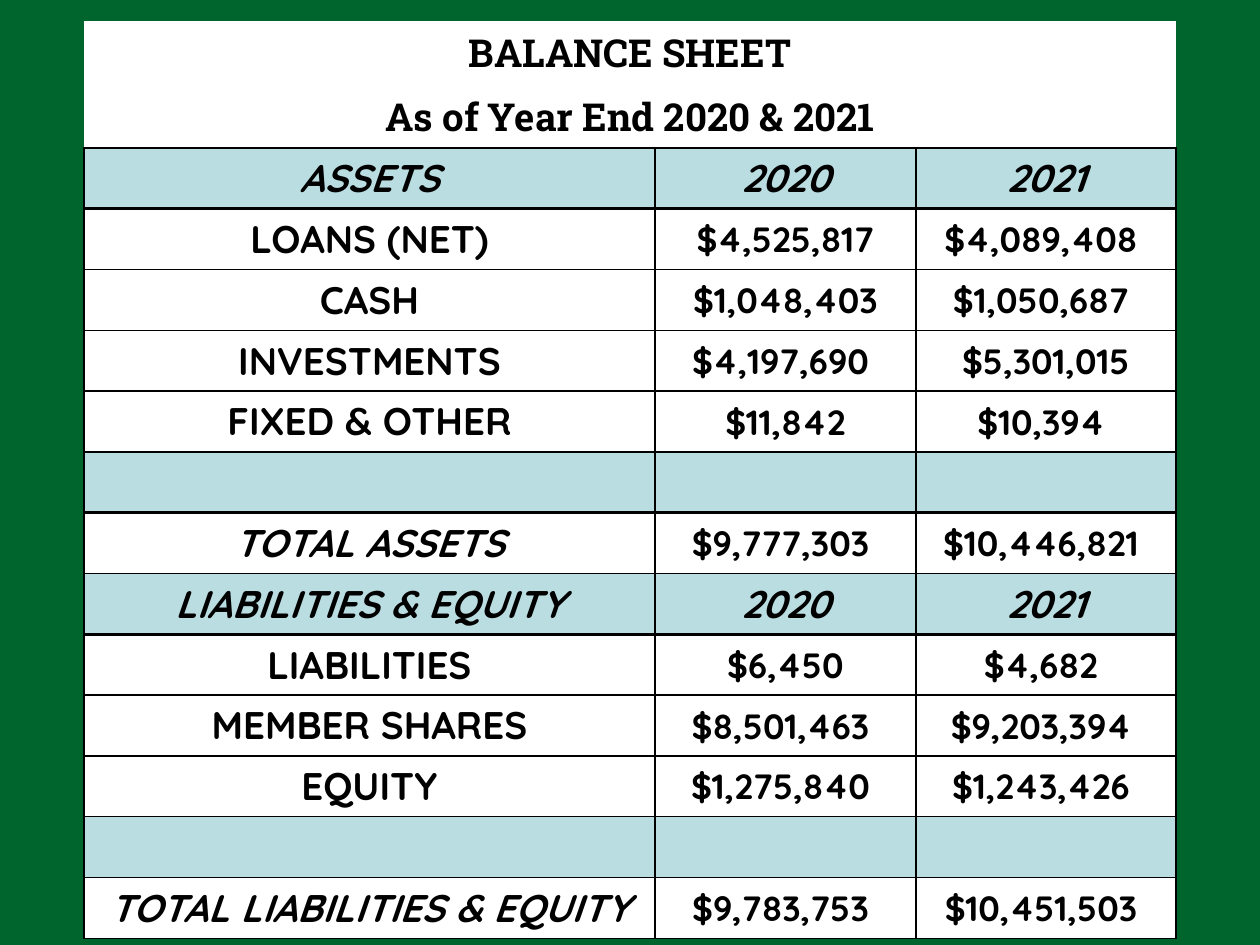
from lxml import etree
from pptx import Presentation
from pptx.dml.color import RGBColor
from pptx.enum.text import MSO_ANCHOR, PP_ALIGN
from pptx.oxml.ns import qn
from pptx.util import Emu, Pt

CENTER, MIDDLE = PP_ALIGN.CENTER, MSO_ANCHOR.MIDDLE
GREEN = RGBColor(0x00, 0x64, 0x2D)
TEAL = RGBColor(0xBA, 0xDD, 0xE1)
WHITE = RGBColor(0xFF, 0xFF, 0xFF)
BLACK = RGBColor(0x00, 0x00, 0x00)
SCALE = 914400 / 126

TITLE = dict(name="Roboto Slab", size=Pt(22), bold=True, italic=False)
LABEL = dict(TITLE, name="Quicksand")
HEADING = dict(LABEL, italic=True)
AMOUNT = dict(LABEL, size=Pt(20))

STYLES = {
    "title": (TITLE, TITLE, WHITE, 63),
    "head": (HEADING, HEADING, TEAL, 60),
    "item": (LABEL, AMOUNT, WHITE, 60),
    "gap": (LABEL, LABEL, TEAL, 61),
    "total": (HEADING, AMOUNT, WHITE, 60),
}
COLUMNS = (571, 261, 260)
ROWS = [
    ("title", "BALANCE SHEET", "", ""),
    ("title", "As of Year End 2020 & 2021", "", ""),
    ("head", "ASSETS", "2020", "2021"),
    ("item", "LOANS (NET)", "$4,525,817", "$4,089,408 "),
    ("item", "CASH", "$1,048,403", "$1,050,687 "),
    ("item", "INVESTMENTS", "$4,197,690 ", "$5,301,015"),
    ("item", "FIXED & OTHER", "$11,842", "$10,394 "),
    ("gap", "", "", ""),
    ("total", "TOTAL ASSETS", "$9,777,303 ", "$10,446,821 "),
    ("head", "LIABILITIES & EQUITY", "2020", "2021"),
    ("item", "LIABILITIES", "$6,450", "$4,682 "),
    ("item", "MEMBER SHARES", "$8,501,463 ", "$9,203,394 "),
    ("item", "EQUITY", "$1,275,840 ", "$1,243,426 "),
    ("gap", "", "", ""),
    ("total", "TOTAL LIABILITIES & EQUITY", "$9,783,753 ", "$10,451,503 "),
]
THICK_BELOW = (2, 7, 9)
TITLE_ROWS = 2


def px(n):
    """Convert pixels to EMU."""
    return Emu(round(n * SCALE))


def border_widths(row):
    """Return the point width of each border of a row's cells."""
    if row < TITLE_ROWS:
        return dict(L=0, R=0, T=0, B=int(row == TITLE_ROWS - 1))
    return dict(L=1, R=1, T=1 + (row - 1 in THICK_BELOW),
                B=1 + (row in THICK_BELOW))


def set_borders(cell, widths):
    """Draw black borders, or none where the width is zero."""
    tcPr = cell._tc.get_or_add_tcPr()
    for side, width in widths.items():
        ln = etree.SubElement(tcPr, qn(f"a:ln{side}"), w=str(Pt(width)))
        if width:
            fill = etree.SubElement(ln, qn("a:solidFill"))
            etree.SubElement(fill, qn("a:srgbClr"), val=str(BLACK))
        else:
            etree.SubElement(ln, qn("a:noFill"))


def set_text(cell, text, fmt):
    """Write one centred run with the given font values."""
    cell.vertical_anchor = MIDDLE
    if fmt is AMOUNT:
        for side in ("left", "top", "right", "bottom"):
            setattr(cell, f"margin_{side}", px(int(side != "bottom")))
    p = cell.text_frame.paragraphs[0]
    p.alignment = CENTER
    if text:
        r = p.add_run()
        r.text = text
        r.font.color.rgb = BLACK
        for key, value in fmt.items():
            setattr(r.font, key, value)


def add_balance_sheet(s, left, top):
    """Place the balance sheet table with its corner at left, top."""
    heights = [STYLES[row[0]][3] for row in ROWS]
    table = s.shapes.add_table(len(ROWS), len(COLUMNS), px(left), px(top),
                               px(sum(COLUMNS)), px(sum(heights))).table
    table.first_row = table.horz_banding = False
    for column, width in zip(table.columns, COLUMNS):
        column.width = px(width)
    for i, (kind, *texts) in enumerate(ROWS):
        label_fmt, value_fmt, fill, height = STYLES[kind]
        table.rows[i].height = px(height)
        for j, text in enumerate(texts):
            cell = table.cell(i, j)
            set_borders(cell, border_widths(i))
            cell.fill.solid()
            cell.fill.fore_color.rgb = fill
            set_text(cell, text, value_fmt if j else label_fmt)
        if kind == "title":
            table.cell(i, 0).merge(table.cell(i, len(COLUMNS) - 1))


def main():
    """Build and save the slide."""
    prs = Presentation()
    prs.slide_width, prs.slide_height = px(1260), px(945)
    s = prs.slides.add_slide(prs.slide_layouts[6])
    s.background.fill.solid()
    s.background.fill.fore_color.rgb = GREEN
    add_balance_sheet(s, 84, 21)
    prs.save("out.pptx")


if __name__ == "__main__":
    main()
